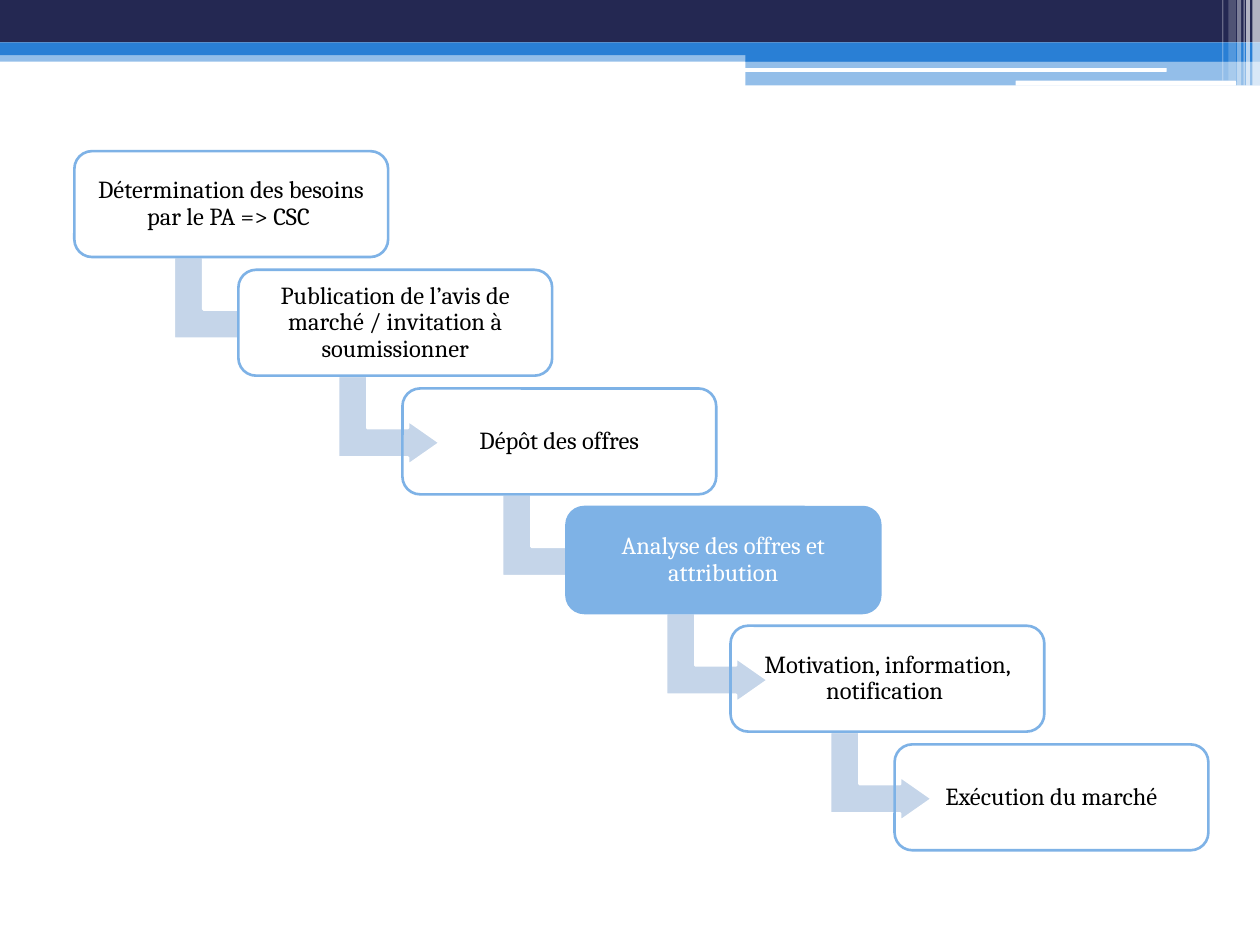
from dataclasses import dataclass

from lxml.etree import SubElement
from pptx import Presentation
from pptx.dml.color import RGBColor
from pptx.enum.shapes import MSO_SHAPE as Preset
from pptx.enum.text import MSO_ANCHOR as Anchor, PP_ALIGN as Align
from pptx.oxml.ns import qn
from pptx.util import Pt

COLOURS = {
    "navy": "242852",
    "blue": "297FD5",
    "white": "FFFFFF",
    "black": "000000",
    "outline": "7EB2E6",
    "arrow": "C5D5E9",
}
FONT = "Cambria"
BOX_LEFT, BOX_TOP, BOX_WIDTH, BOX_HEIGHT = 42.5, 86.4, 179.3, 60.5
STEP_X, STEP_Y = 93.74, 67.8
ARROW_DX, ARROW_DY, ARROW_WIDTH, ARROW_HEIGHT = 60.5, 56.9, 51.1, 58.3


@dataclass
class Band:
    left: float
    top: float
    width: float
    height: float
    colour: str
    opacity: int = 100
    preset: Preset = Preset.RECTANGLE


@dataclass
class Step:
    text: str
    fill: str | None = None
    font_colour: str = "black"


BANDS = [
    Band(0, 28.8, 720, 6.5, "blue", 50),
    Band(0, 0, 720, 24.3, "navy"),
    Band(0, 24.3, 720, 7.2, "blue"),
    Band(426, 28.1, 294, 7.2, "blue"),
    Band(426, 34.6, 294, 14.2, "blue", 50),
    Band(425.5, 38.9, 241.2, 2.2, "white", preset=Preset.ROUNDED_RECTANGLE),
    Band(580.3, 46.1, 126, 2.9, "white", preset=Preset.ROUNDED_RECTANGLE),
    Band(715.7, 0, 4.3, 49, "white", 65),
    Band(712.1, 0, 2.2, 49, "white", 65),
    Band(710.6, 0, 0.7, 49, "white", 60),
    Band(707, 0, 2.2, 49, "white", 40),
    Band(702, 0, 4.3, 46.1, "white", 20),
    Band(698.4, 0, 0.7, 46.1, "white", 30),
]

STEPS = [
    Step("Détermination des besoins par le PA => CSC "),
    Step("Publication de l’avis de marché / invitation à soumissionner", "white"),
    Step("Dépôt des offres"),
    Step("Analyse des offres et attribution", "outline", "white"),
    Step("Motivation, information, notification "),
    Step("Exécution du marché"),
]


def rgb(name: str) -> RGBColor:
    return RGBColor.from_string(COLOURS[name])


def add_preset(page, preset: Preset, left: float, top: float, width: float,
               height: float, fill: str | None, line: str | None = None):
    shape = page.shapes.add_shape(preset, Pt(left), Pt(top), Pt(width), Pt(height))
    shape.shadow.inherit = False
    if fill:
        shape.fill.solid()
        shape.fill.fore_color.rgb = rgb(fill)
    else:
        shape.fill.background()
    if line:
        shape.line.color.rgb = rgb(line)
        shape.line.width = Pt(1.5)
    else:
        shape.line.fill.background()
    return shape


def draw_band(page, band: Band) -> None:
    shape = add_preset(page, band.preset, band.left, band.top, band.width,
                       band.height, band.colour)
    if band.opacity < 100:
        colour = shape.fill._xPr.find(f"{qn('a:solidFill')}/{qn('a:srgbClr')}")
        SubElement(colour, qn("a:alpha"), val=str(band.opacity * 1000))


def draw_arrow(page, left: float, top: float) -> None:
    """Draw the bent arrow that leads from the box at left, top to the next one."""
    arrow = add_preset(page, Preset.BENT_UP_ARROW, left + ARROW_DX, top + ARROW_DY,
                       ARROW_WIDTH, ARROW_HEIGHT, "arrow", "white")
    arrow.rotation = 90
    for index, value in enumerate((0.328, 0.25, 0.358)):
        arrow.adjustments[index] = value


def draw_step(page, step: Step, left: float, top: float) -> None:
    box = add_preset(page, Preset.ROUNDED_RECTANGLE, left, top, BOX_WIDTH,
                     BOX_HEIGHT, step.fill, "outline")
    frame = box.text_frame
    frame.text = step.text
    frame.word_wrap = True
    frame.vertical_anchor = Anchor.MIDDLE
    frame.margin_left = frame.margin_right = Pt(1.5)
    frame.margin_top = frame.margin_bottom = Pt(1.5)
    para = frame.paragraphs[0]
    para.alignment = Align.CENTER
    para.line_spacing = 0.9
    font = para.runs[0].font
    font.name = FONT
    font.size = Pt(14)
    font.color.rgb = rgb(step.font_colour)


def main() -> None:
    deck = Presentation()
    deck.slide_width, deck.slide_height = Pt(720), Pt(540)
    page = deck.slides.add_slide(deck.slide_layouts[6])
    for band in BANDS:
        draw_band(page, band)
    for index, step in enumerate(STEPS):
        left, top = BOX_LEFT + index * STEP_X, BOX_TOP + index * STEP_Y
        if index < len(STEPS) - 1:
            draw_arrow(page, left, top)
        draw_step(page, step, left, top)
    deck.save("out.pptx")


if __name__ == "__main__":
    main()
